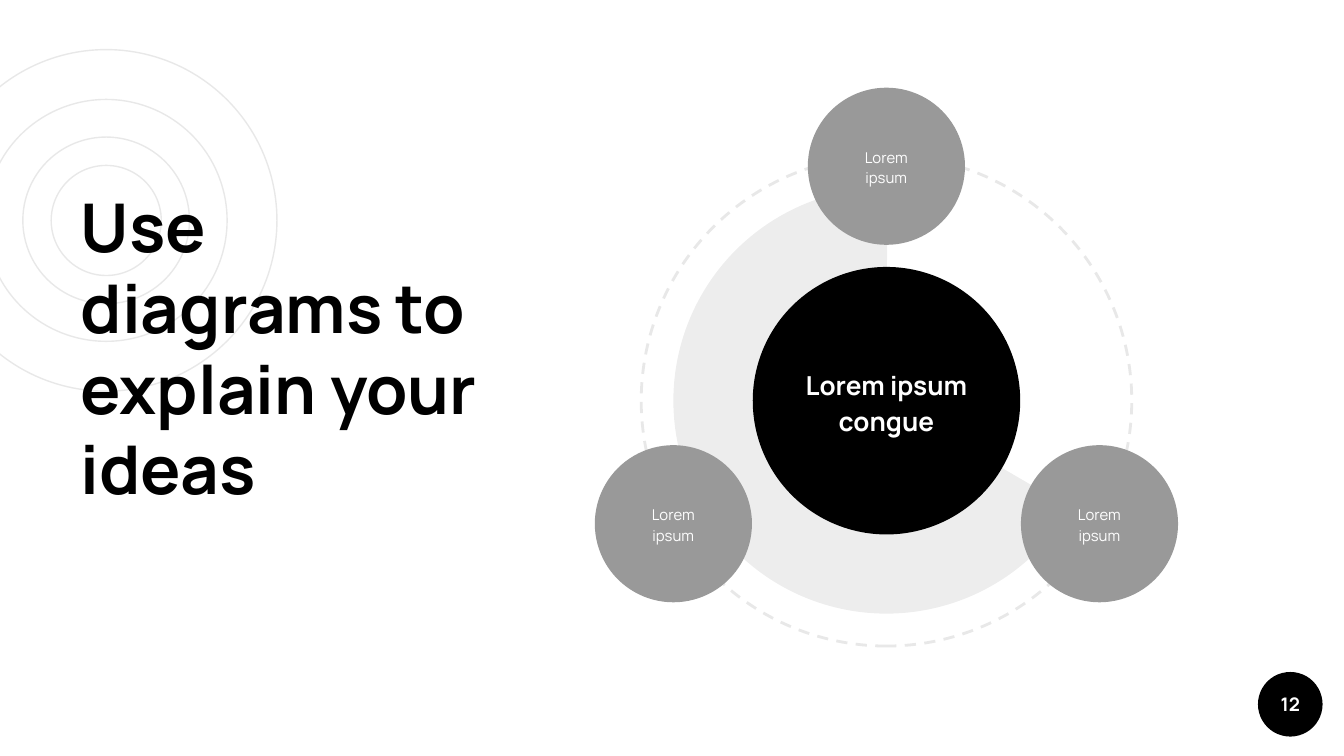
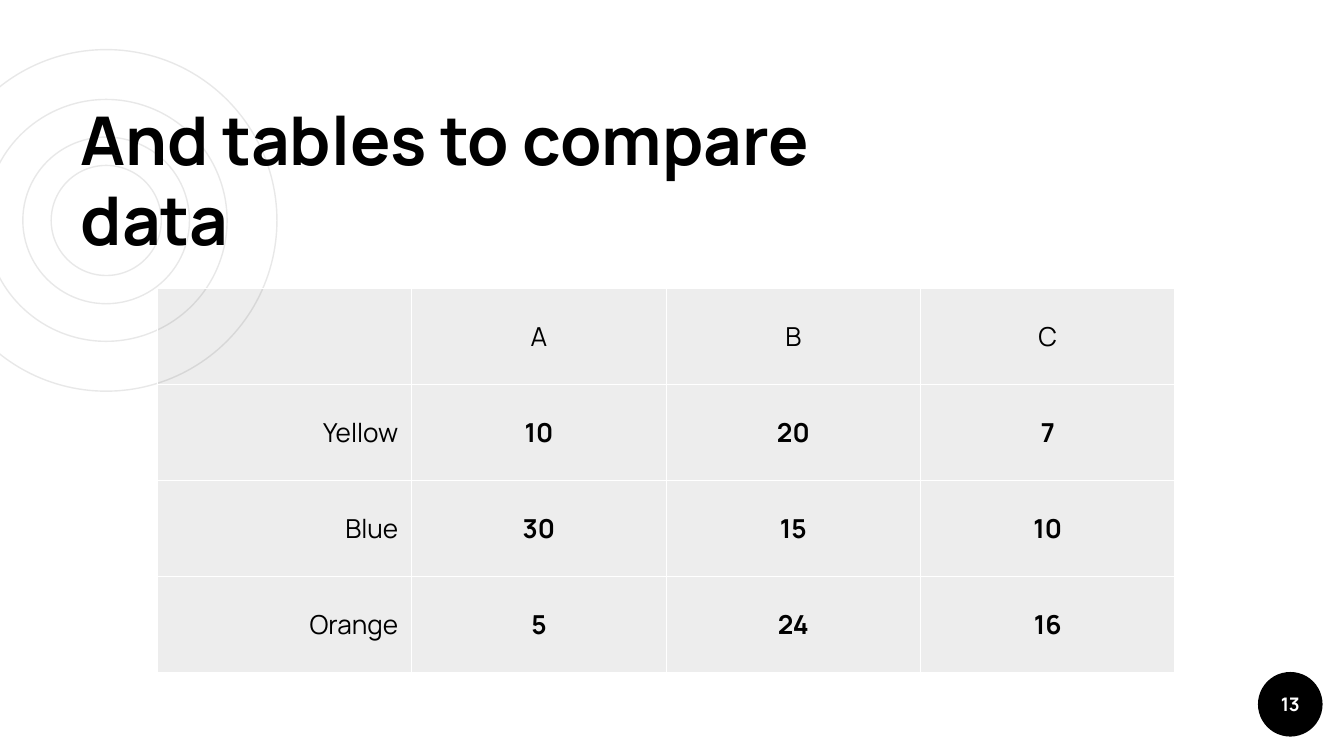
"""Build a diagram slide and a table slide that share rings, title style and page badge."""
from math import cos, radians, sin

from lxml import etree
from pptx import Presentation
from pptx.dml.color import RGBColor
from pptx.enum.dml import MSO_LINE
from pptx.enum.shapes import MSO_SHAPE
from pptx.enum.text import MSO_ANCHOR, MSO_AUTO_SIZE, PP_ALIGN
from pptx.oxml.ns import qn
from pptx.util import Pt

BLACK = RGBColor(0x00, 0x00, 0x00)
WHITE = RGBColor(0xFF, 0xFF, 0xFF)
GREY = RGBColor(0x99, 0x99, 0x99)
PALE = RGBColor(0xE8, 0xE8, 0xE8)
OVAL, PIE = MSO_SHAPE.OVAL, MSO_SHAPE.PIE
LEFT, MID, RIGHT = PP_ALIGN.LEFT, PP_ALIGN.CENTER, PP_ALIGN.RIGHT
TOP, CENTER, BOTTOM = MSO_ANCHOR.TOP, MSO_ANCHOR.MIDDLE, MSO_ANCHOR.BOTTOM
FIXED, DASH = MSO_AUTO_SIZE.NONE, MSO_LINE.DASH

FONT = "Manrope"
TINT = 7
PAD = 7.2

DIAGRAM = {"title": "Use diagrams to explain your ideas", "page": "12",
           "box": (36, 92.2, 236.2, 231.8), "anchor": TOP}
COMPARE = {"title": "And tables to compare data", "page": "13",
           "box": (36, 92.2, 411.1, 54), "anchor": BOTTOM}

RINGS = {"hub": (56.9, 118.1), "sizes": (183, 129.6, 89.3, 59)}
BADGE = {"hub": (691.2, 377.3), "size": 34.6}

HUB = (474.9, 214.7)
CORE = {"text": "Lorem ipsum congue", "size": 143.3}
ORBIT, WEDGE, NODE = 262.8, 228.2, 84.2
ARC = (18.12, 162.15)
NODES = [("Lorem ipsum", 270, 125.6),
         ("Lorem ipsum", 150, 131.8),
         ("Lorem ipsum", 30, 131.8)]

ROWS = [("", "A", "B", "C"),
        ("Yellow", "10", "20", "7"),
        ("Blue", "30", "15", "10"),
        ("Orange", "5", "24", "16")]
GRID = {"left": 84.3, "top": 154.4, "wide": 136.3, "high": 51.5}


def apply(item, values):
    """Set each named attribute on an item."""
    for name, value in values.items():
        setattr(item, name, value)


def write(frame, text, size, color, bold=False, align=MID, gap=None):
    """Put one formatted paragraph in a text frame."""
    para = frame.paragraphs[0]
    apply(para, {"alignment": align, "line_spacing": gap})
    run = para.add_run()
    run.text = text
    apply(run.font, {"name": FONT, "size": Pt(size), "bold": bold})
    run.font.color.rgb = color


def frame_up(frame, anchor=CENTER, pad=PAD):
    """Set the wrap, anchor and margins of a text frame."""
    apply(frame, {"word_wrap": True, "auto_size": FIXED, "vertical_anchor": anchor,
                  "margin_left": Pt(pad), "margin_right": Pt(pad),
                  "margin_top": Pt(PAD), "margin_bottom": Pt(PAD)})
    return frame


def fade(node):
    """Make the fill colour inside an element mostly clear."""
    for color in node.iter(qn("a:srgbClr")):
        etree.SubElement(color, qn("a:alpha"), val=str(TINT * 1000))


def disc(slide, hub, size, fill=None, line=None, weight=0.75, kind=OVAL):
    """Draw a round shape centred on a hub."""
    left, top = (Pt(mid - size / 2) for mid in hub)
    shape = slide.shapes.add_shape(kind, left, top, Pt(size), Pt(size))
    shape.shadow.inherit = False
    if fill is None:
        shape.fill.background()
    else:
        shape.fill.solid()
        shape.fill.fore_color.rgb = fill
    if line is None:
        shape.line.fill.background()
    else:
        shape.line.color.rgb = line
        shape.line.width = Pt(weight)
    return shape


def dress(slide, layout):
    """Move the shared rings and badge from a slide to its layout."""
    parts = [disc(slide, RINGS["hub"], size, line=PALE) for size in RINGS["sizes"]]
    parts.append(disc(slide, BADGE["hub"], BADGE["size"], BLACK))
    for part in parts:
        layout.shapes.element.append(part.element)


def start(slide, data):
    """Fill the title and the page number."""
    title = slide.shapes.title
    sides = map(Pt, data["box"])
    apply(title, dict(zip(("left", "top", "width", "height"), sides)))
    write(frame_up(title.text_frame, data["anchor"]), data["title"], 36, BLACK, True, LEFT)
    size = BADGE["size"]
    left, top = (Pt(mid - size / 2) for mid in BADGE["hub"])
    page = slide.shapes.add_textbox(left, top, Pt(size), Pt(size))
    write(frame_up(page.text_frame), data["page"], 10, WHITE, True)


def draw(slide):
    """Draw the core, its wedge and the nodes on the orbit."""
    orbit = disc(slide, HUB, ORBIT, line=PALE, weight=1.5)
    orbit.rotation = 270
    orbit.line.dash_style = DASH
    wedge = disc(slide, HUB, WEDGE, BLACK, kind=PIE)
    for spot, angle in enumerate(ARC):
        wedge.adjustments[spot] = angle
    fade(wedge.element.spPr)
    core = disc(slide, HUB, CORE["size"], BLACK)
    write(frame_up(core.text_frame, pad=5), CORE["text"], 14, WHITE, True, gap=1.15)
    for text, angle, reach in NODES:
        turn = radians(angle)
        hub = (HUB[0] + reach * cos(turn), HUB[1] + reach * sin(turn))
        node = disc(slide, hub, NODE, GREY)
        write(frame_up(node.text_frame), text, 8, WHITE, gap=1.15)


def edge(props):
    """Give a cell thin white borders."""
    for spot, side in enumerate(("lnL", "lnR", "lnT", "lnB")):
        line = etree.Element(qn("a:" + side), w=str(Pt(0.75)))
        fill = etree.SubElement(line, qn("a:solidFill"))
        etree.SubElement(fill, qn("a:srgbClr"), val=str(WHITE))
        props.insert(spot, line)


def tabulate(slide):
    """Add the table and format its cells."""
    down, across = len(ROWS), len(ROWS[0])
    wide, high = GRID["wide"], GRID["high"]
    table = slide.shapes.add_table(down, across, Pt(GRID["left"]), Pt(GRID["top"]),
                                   Pt(wide * across), Pt(high * down)).table
    apply(table, {"first_row": False, "horz_banding": False})
    for row, texts in enumerate(ROWS):
        for col, text in enumerate(texts):
            cell = table.cell(row, col)
            apply(cell, {"vertical_anchor": CENTER,
                         "margin_left": Pt(PAD), "margin_right": Pt(PAD),
                         "margin_top": Pt(5), "margin_bottom": Pt(5)})
            cell.fill.solid()
            cell.fill.fore_color.rgb = BLACK
            props = cell._tc.get_or_add_tcPr()
            fade(props)
            edge(props)
            if text:
                write(cell.text_frame, text, 14, BLACK, row > 0 and col > 0,
                      MID if col else RIGHT)


def main():
    """Build and save both slides."""
    deck = Presentation()
    apply(deck, {"slide_width": Pt(720), "slide_height": Pt(405)})
    layout = deck.slide_layouts[5]
    for spot, (data, fill) in enumerate(((DIAGRAM, draw), (COMPARE, tabulate))):
        slide = deck.slides.add_slide(layout)
        if spot == 0:
            dress(slide, layout)
        start(slide, data)
        fill(slide)
    deck.save("out.pptx")


if __name__ == "__main__":
    main()
